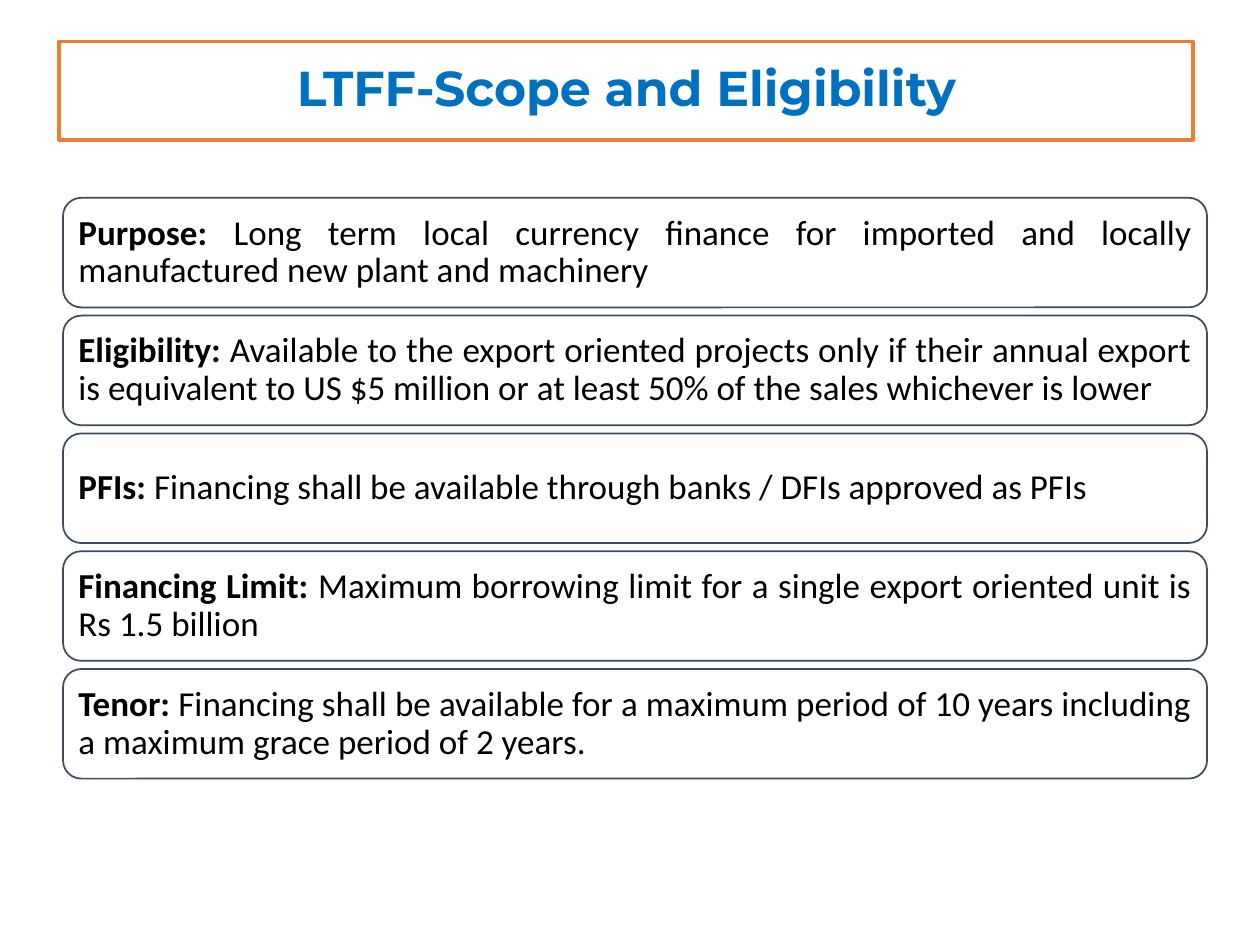
from pptx import Presentation
from pptx.dml.color import RGBColor
from pptx.enum.shapes import MSO_SHAPE
from pptx.enum.text import MSO_ANCHOR, PP_ALIGN
from pptx.util import Inches, Pt


def rgb(code):
    return RGBColor.from_string(code)


def write(shape, runs, font="Calibri", size=20, color="000000",
          align=PP_ALIGN.JUSTIFY, inset=0.08):
    """Fill a shape with one paragraph of (text, bold) runs."""
    frame = shape.text_frame
    frame.word_wrap = True
    frame.vertical_anchor = MSO_ANCHOR.MIDDLE
    frame.margin_left = frame.margin_right = Inches(inset)
    frame.margin_top = frame.margin_bottom = Inches(inset)
    para = frame.paragraphs[0]
    para.alignment = align
    para.line_spacing = 0.9
    for text, bold in runs:
        run = para.add_run()
        run.text = text
        run.font.name = font
        run.font.size = Pt(size)
        run.font.bold = bold
        run.font.color.rgb = rgb(color)


deck = Presentation()
deck.slide_width, deck.slide_height = Inches(10), Inches(7.5)
slide = deck.slides.add_slide(deck.slide_layouts[6])

# Title frame
title = slide.shapes.add_shape(
    MSO_SHAPE.RECTANGLE, Inches(0.47), Inches(0.33), Inches(9), Inches(0.78))
title.shadow.inherit = False
title.fill.background()
title.line.color.rgb = rgb("ED7D31")
title.line.width = Pt(2)
write(title, [("LTFF-Scope and Eligibility", True)], font="Montserrat",
      size=28, color="0070C0", align=PP_ALIGN.CENTER, inset=0.05)

# Stack of rounded boxes, evenly spaced
items = [
    ("Purpose:", "Long term local currency finance for imported and locally "
     "manufactured new plant and machinery"),
    ("Eligibility:", "Available to the export oriented projects only if their "
     "annual export is equivalent to US $5 million or at least 50% of the "
     "sales whichever is lower"),
    ("PFIs:", "Financing shall be available through banks / DFIs approved "
     "as PFIs"),
    ("Financing Limit:", "Maximum borrowing limit for a single export "
     "oriented unit is Rs 1.5 billion"),
    ("Tenor:", "Financing shall be available for a maximum period of 10 years "
     "including a maximum grace period of 2 years."),
]
top, step = Inches(1.57), Inches(3.74) // (len(items) - 1)
for i, (label, text) in enumerate(items):
    box = slide.shapes.add_shape(
        MSO_SHAPE.ROUNDED_RECTANGLE, Inches(0.5), top + i * step,
        Inches(9.08), Inches(0.87))
    box.shadow.inherit = False
    box.fill.solid()
    box.fill.fore_color.rgb = rgb("FFFFFF")
    box.line.color.rgb = rgb("3E4C60")
    box.line.width = Pt(1)
    write(box, [(label + " ", True), (text, False)])

deck.save("out.pptx")
